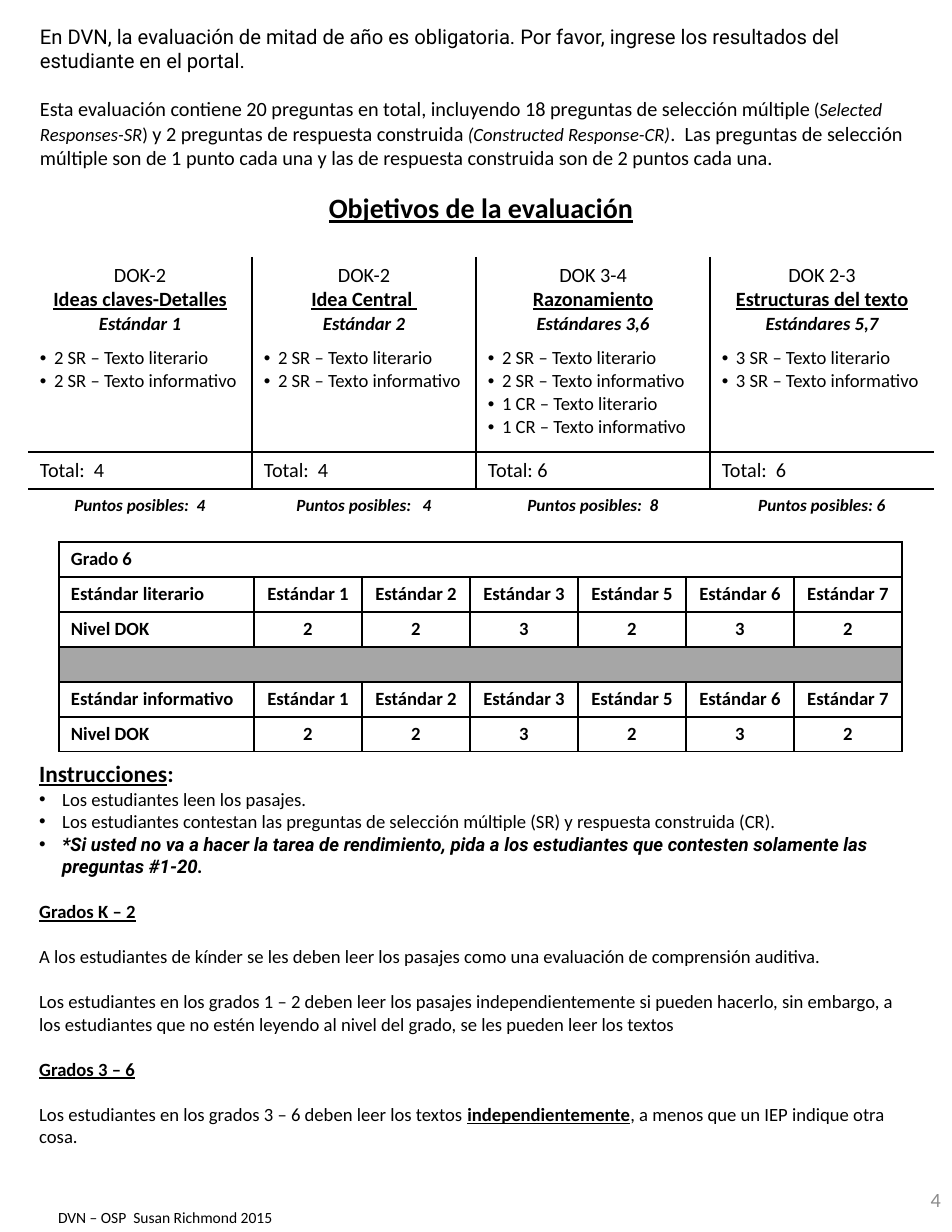
from dataclasses import dataclass

from lxml.etree import SubElement
from pptx import Presentation
from pptx.dml.color import RGBColor
from pptx.enum.text import MSO_ANCHOR, MSO_AUTO_SIZE, PP_ALIGN
from pptx.oxml.ns import qn
from pptx.util import Emu, Pt


@dataclass(frozen=True)
class Theme:
    ink: str = "000000"
    band: str = "A6A6A6"
    page_number: str = "8C8C8C"
    heading: Pt = Pt(18)
    section: Pt = Pt(15)
    lead: Pt = Pt(13)
    text: Pt = Pt(12)
    points: Pt = Pt(11)
    footer: Pt = Pt(10)
    rule: Pt = Pt(1)
    gap: Pt = Pt(14.6)
    wide_gap: Pt = Pt(15.5)
    font: str = "Calibri"
    accent_font: str = "Roboto"


theme = Theme()
PX = 914400 / 112
PLAIN_TABLE = "{2D5ABB26-0587-4C30-8999-92F81FD0307C}"


def write(frame, entries, color=theme.ink):
    for index, (layout, spans) in enumerate(entries):
        para = frame.paragraphs[0] if index == 0 else frame.add_paragraph()
        values = {"space_before": Pt(0), **layout}
        hanging = values.pop("hanging", 0)
        for name, value in values.items():
            setattr(para, name, value)
        properties = para._p.get_or_add_pPr()
        properties.set("marL", str(int(hanging * PX)))
        properties.set("indent", str(int(-hanging * PX)))
        if hanging:
            SubElement(properties, qn("a:buFont"), typeface="Arial")
            SubElement(properties, qn("a:buChar"), char="•")
        else:
            SubElement(properties, qn("a:buNone"))
        for text, style in spans:
            span = para.add_run()
            span.text = text
            for name, value in {"name": theme.font, "size": theme.text, **style}.items():
                setattr(span.font, name, value)
            span.font.color.rgb = RGBColor.from_string(color)


def build_table(page, left, top, widths, heights, contents, edges):
    area = [Emu(int(value * PX)) for value in (left, top, sum(widths), sum(heights))]
    table = page.shapes.add_table(len(heights), len(widths), *area).table
    table.first_row = table.horz_banding = False
    table._tbl.tblPr[0].text = PLAIN_TABLE
    for column, width in zip(table.columns, widths):
        column.width = Emu(int(width * PX))
    for row, (height, cells) in enumerate(zip(heights, contents)):
        table.rows[row].height = Emu(int(height * PX))
        if len(cells) == 1:
            table.cell(row, 0).merge(table.cell(row, len(widths) - 1))
        for column in range(len(widths)):
            cell = table.cell(row, column)
            entries = cells[column] if column < len(cells) else []
            across, down = (12, 6) if entries else (0, 0)
            cell.margin_left = cell.margin_right = Emu(int(across * PX))
            cell.margin_top = cell.margin_bottom = Emu(int(down * PX))
            cell.fill.background()
            write(cell.text_frame, entries)
            properties = cell._tc.get_or_add_tcPr()
            for order, side in enumerate(edges[row][column]):
                line = SubElement(properties, qn(f"a:ln{side}"), w=str(theme.rule))
                fill = SubElement(line, qn("a:solidFill"))
                SubElement(fill, qn("a:srgbClr"), val=theme.ink)
                properties.insert(order, line)
    return table


deck = Presentation()
deck.slide_width, deck.slide_height = Emu(int(952 * PX)), Emu(int(1232 * PX))
page = deck.slides.add_slide(deck.slide_layouts[1])
title = page.shapes.title
title.element.getparent().remove(title.element)

center = {"alignment": PP_ALIGN.CENTER}
spaced = {"space_before": theme.gap}
bold = {"bold": True}
italic = {"italic": True}
underlined = {"bold": True, "underline": True}
strong_italic = {"bold": True, "italic": True}
lead = {"size": theme.lead}

introduction = [
    ({}, [("En DVN, la evaluación de mitad de año es obligatoria. Por favor, ingrese los resultados del estudiante en el portal.",
           {**lead, "name": theme.accent_font})]),
    ({"space_before": theme.wide_gap}, [
        ("Esta evaluación contiene 20 preguntas en total, incluyendo 18 preguntas de selección múltiple ", lead),
        ("(", {}),
        ("Selected Responses-SR", italic),
        (") ", {}),
        ("y 2 preguntas de respuesta construida ", lead),
        ("(Constructed Response-CR)", italic),
        (".  Las preguntas de selección múltiple son de 1 punto cada una y las de respuesta construida son de 2 puntos cada una.", lead),
    ]),
]
heading = [(center, [("Objetivos de la evaluación", {**underlined, "size": theme.heading})])]
objectives = [
    ("DOK-2", "Ideas claves-Detalles", "Estándar 1", ["2 SR"], "Total:  4", "Puntos posibles:  4"),
    ("DOK-2", "Idea Central ", "Estándar 2", ["2 SR"], "Total:  4", "Puntos posibles:   4"),
    ("DOK 3-4", "Razonamiento", "Estándares 3,6", ["2 SR", "1 CR"], "Total: 6", "Puntos posibles:  8"),
    ("DOK 2-3", "Estructuras del texto", "Estándares 5,7", ["3 SR"], "Total:  6", "Puntos posibles: 6"),
]
headers, questions, totals, points = [], [], [], []
for level, topic, standard, counts, total, score in objectives:
    headers.append([
        (center, [(level, lead)]),
        (center, [(topic, {**underlined, **lead})]),
        (center, [(standard, strong_italic)]),
    ])
    questions.append([({"hanging": 14}, [(f"{count} – Texto {kind}", {})])
                      for count in counts for kind in ("literario", "informativo")])
    totals.append([({}, [(total, lead)])])
    points.append([(center, [(score, {**strong_italic, "size": theme.points})])])

open_row = [""] * 4
sides = ["R", "LR", "LR", "L"]
divided_rows = [[side + extra for side in sides] for extra in ("", "B", "T")]
build_table(page, 28, 20, [224, 224, 234, 224], [166, 71, 84, 111, 37, 32],
            [[introduction], [heading], headers, questions, totals, points],
            [open_row, open_row, *divided_rows, open_row])

levels = [2, 2, 3, 2, 3, 2]
grade_rows = [[[({}, [("Grado 6", bold)])]]]
for kind in ("literario", "informativo"):
    standards = [f"Estándar {number}" for number in (1, 2, 3, 5, 6, 7)]
    for label, values in ((f"Estándar {kind}", standards), ("Nivel DOK", levels)):
        grade_rows.append([[({}, [(label, bold)])]]
                          + [[(center, [(str(value), bold)])] for value in values])
grade_rows.insert(3, [[]])
grades = build_table(page, 59, 542, [195] + [108] * 6, [35] * 6, grade_rows, [["LRTB"] * 7] * 6)
band = grades.cell(3, 0)
band.fill.solid()
band.fill.fore_color.rgb = RGBColor.from_string(theme.band)

instructions = [
    ({}, [("Instrucciones", {**underlined, "size": theme.section}), (":", {**bold, "size": theme.section})]),
    ({"hanging": 23}, [("Los estudiantes leen los pasajes.", {})]),
    ({"hanging": 23}, [("Los estudiantes contestan las preguntas de selección múltiple (SR) y respuesta construida (CR).", {})]),
    ({"hanging": 23}, [("*Si usted no va a hacer la tarea de rendimiento, pida a los estudiantes que contesten solamente las preguntas #1-20.",
                        {**strong_italic, "name": theme.accent_font})]),
    (spaced, [("Grados K – 2", underlined)]),
    (spaced, [("A los estudiantes de kínder se les deben leer los pasajes como una evaluación de comprensión auditiva.", {})]),
    (spaced, [("Los estudiantes en los grados 1 – 2 deben leer los pasajes independientemente si pueden hacerlo, sin embargo, a los estudiantes que no estén leyendo al nivel del grado, se les pueden leer los textos", {})]),
    (spaced, [("Grados 3 – 6", underlined)]),
    (spaced, [
        ("Los estudiantes en los grados 3 – 6 deben leer los textos ", {}),
        ("independientemente", underlined),
        (", a menos que un IEP indique otra cosa.", {}),
    ]),
]
footer = [({}, [("DVN – OSP  Susan Richmond 2015", {"size": theme.footer})])]
number = [({"alignment": PP_ALIGN.RIGHT}, [("4", lead)])]
body = page.placeholders[1]
footer_box, number_box = [page.shapes.add_textbox(0, 0, 0, 0) for _ in range(2)]
for box, area, entries, color, anchor in (
    (body, (28, 754, 896, 402), instructions, theme.ink, MSO_ANCHOR.TOP),
    (footer_box, (47, 1202, 691, 30), footer, theme.ink, MSO_ANCHOR.TOP),
    (number_box, (878, 1166, 74, 66), number, theme.page_number, MSO_ANCHOR.MIDDLE),
):
    for name, value in zip(("left", "top", "width", "height"), area):
        setattr(box, name, Emu(int(value * PX)))
    for name, value in {"word_wrap": True, "auto_size": MSO_AUTO_SIZE.NONE, "vertical_anchor": anchor}.items():
        setattr(box.text_frame, name, value)
    write(box.text_frame, entries, color)

deck.save("out.pptx")
